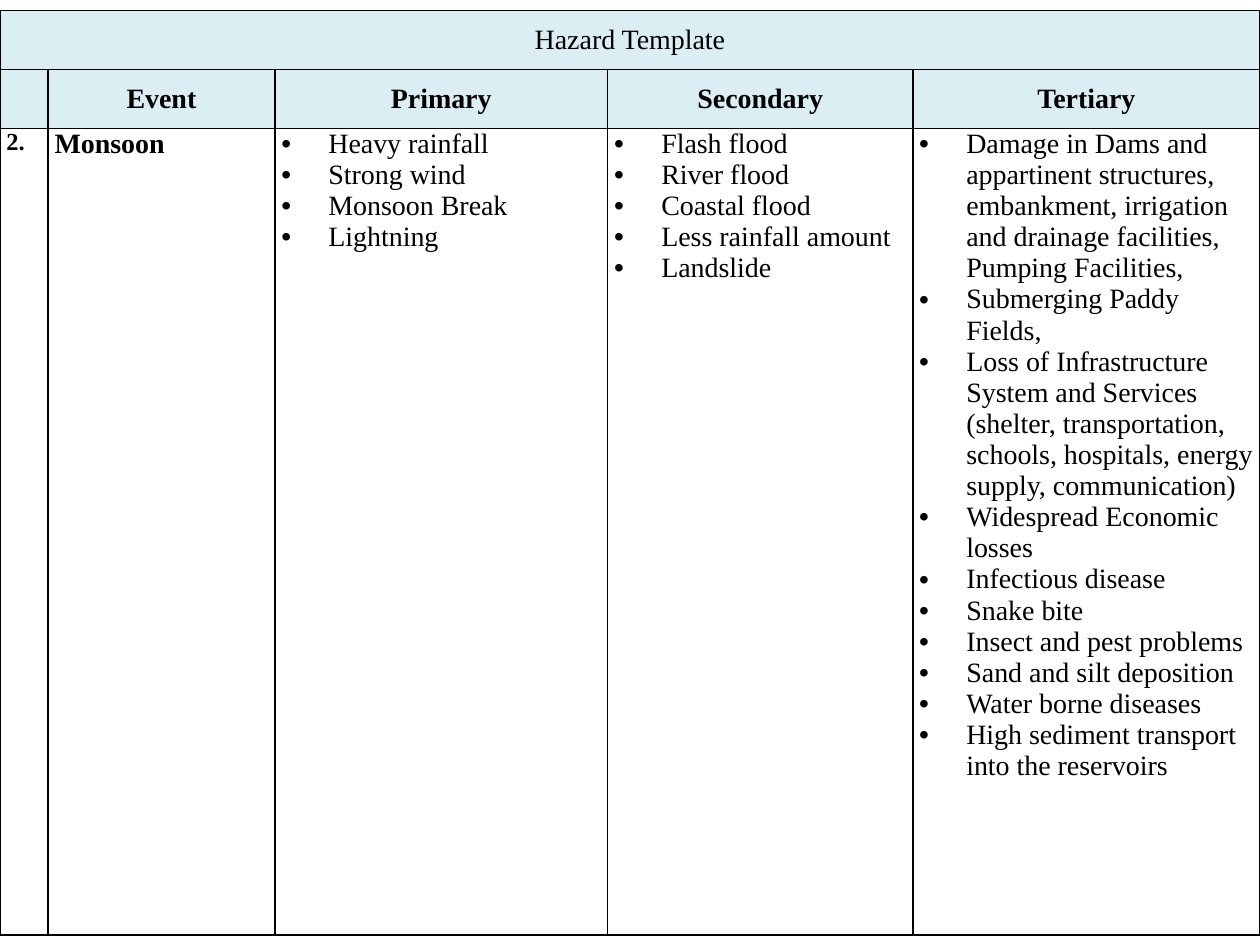
"""Build a one-slide hazard table for the monsoon event."""
from dataclasses import dataclass

from lxml import etree
from pptx import Presentation
from pptx import util as u
from pptx.dml.color import RGBColor
from pptx.enum import text
from pptx.oxml import ns


@dataclass(frozen=True)
class Theme:
    font: str = "Times New Roman"
    ink: str = "000000"
    head: str = "DBEEF4"
    size: int = 16
    small: int = 14
    line: int = 1
    pad: float = 0.13
    hang: float = 0.95


@dataclass(frozen=True)
class Entry:
    lines: tuple[str, ...]
    bold: bool = False
    mark: bool = False
    head: bool = False
    size: int = Theme.size


THEME = Theme()
COLS = (0.97, 4.57, 6.71, 6.15, 7.0)
ROWS = (1.19, 1.19, 16.26)
TOP = 0.21

TITLE = Entry(("Hazard Template",), head=True)
BLANK = Entry((), head=True)
HEADS = ("Event", "Primary", "Secondary", "Tertiary")
FIRST = ("Heavy rainfall", "Strong wind", "Monsoon Break", "Lightning")
SECOND = ("Flash flood", "River flood", "Coastal flood",
          "Less rainfall amount", "Landslide")
THIRD = (
    "Damage in Dams and appartinent structures, embankment, irrigation "
    "and drainage facilities, Pumping Facilities,",
    "Submerging Paddy Fields,",
    "Loss of Infrastructure System and Services (shelter, transportation, "
    "schools, hospitals, energy supply, communication)",
    "Widespread Economic losses",
    "Infectious disease",
    "Snake bite",
    "Insect and pest problems",
    "Sand and silt deposition",
    "Water borne diseases",
    "High sediment transport into the reservoirs",
)
GRID = (
    (TITLE,) + (BLANK,) * 4,
    (BLANK,) + tuple(Entry((name,), bold=True, head=True) for name in HEADS),
    (Entry(("2.",), bold=True, size=THEME.small),
     Entry(("Monsoon",), bold=True))
    + tuple(Entry(lines, mark=True) for lines in (FIRST, SECOND, THIRD)),
)


def add_node(root, tag: str, **attrs: str):
    return etree.SubElement(root, ns.qn(tag), attrs)


def draw_edge(cell) -> None:
    root = cell._tc.get_or_add_tcPr()
    for side in ("L", "R", "T", "B"):
        edge = add_node(root, f"a:ln{side}", w=str(u.Pt(THEME.line)))
        fill = add_node(edge, "a:solidFill")
        add_node(fill, "a:srgbClr", val=THEME.ink)


def add_mark(para) -> None:
    root = para._p.get_or_add_pPr()
    hang = u.Cm(THEME.hang)
    root.set("marL", str(hang))
    root.set("indent", str(-hang))
    add_node(root, "a:buFont", typeface="Arial")
    add_node(root, "a:buChar", char="•")


def write_line(para, line: str, entry: Entry) -> None:
    para.alignment = text.PP_ALIGN.CENTER if entry.head else text.PP_ALIGN.LEFT
    if entry.mark:
        add_mark(para)
    run = para.add_run()
    run.text = line
    run.font.name = THEME.font
    run.font.size = u.Pt(entry.size)
    run.font.bold = entry.bold
    run.font.color.rgb = RGBColor.from_string(THEME.ink)


def fill_cell(cell, entry: Entry) -> None:
    draw_edge(cell)
    if entry.head:
        cell.fill.solid()
        cell.fill.fore_color.rgb = RGBColor.from_string(THEME.head)
    else:
        cell.fill.background()
    cell.margin_left = cell.margin_right = u.Cm(THEME.pad)
    cell.margin_top = cell.margin_bottom = 0
    cell.vertical_anchor = (text.MSO_ANCHOR.MIDDLE if entry.head
                            else text.MSO_ANCHOR.TOP)
    frame = cell.text_frame
    for i, line in enumerate(entry.lines):
        para = frame.add_paragraph() if i else frame.paragraphs[0]
        write_line(para, line, entry)


def draw_table(slide) -> None:
    table = slide.shapes.add_table(
        len(ROWS), len(COLS), 0, u.Cm(TOP),
        u.Cm(sum(COLS)), u.Cm(sum(ROWS))).table
    table.first_row = table.horz_banding = False
    for col, width in zip(table.columns, COLS):
        col.width = u.Cm(width)
    for row, height, items in zip(table.rows, ROWS, GRID):
        row.height = u.Cm(height)
        for cell, entry in zip(row.cells, items):
            fill_cell(cell, entry)
    table.cell(0, 0).merge(table.cell(0, len(COLS) - 1))


def main() -> None:
    deck = Presentation()
    deck.slide_width, deck.slide_height = u.Cm(25.4), u.Cm(19.05)
    draw_table(deck.slides.add_slide(deck.slide_layouts[6]))
    deck.save("out.pptx")


if __name__ == "__main__":
    main()
